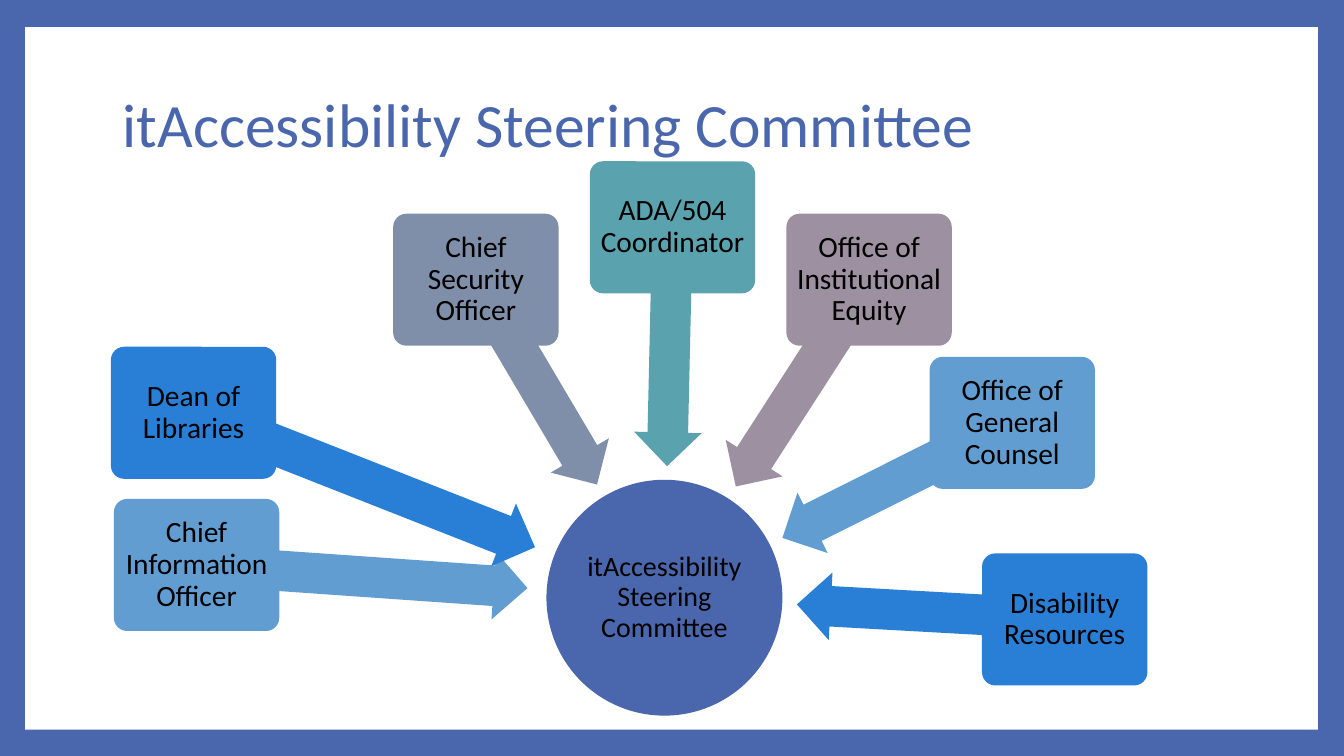
from math import cos, radians, sin

from pptx import Presentation
from pptx.dml.color import RGBColor
from pptx.enum.shapes import MSO_SHAPE
from pptx.enum.text import MSO_ANCHOR, PP_ALIGN
from pptx.util import Inches, Pt

RECTANGLE = MSO_SHAPE.RECTANGLE
ROUNDED = MSO_SHAPE.ROUNDED_RECTANGLE
OVAL = MSO_SHAPE.OVAL
LEFT_ARROW = MSO_SHAPE.LEFT_ARROW
MIDDLE = MSO_ANCHOR.MIDDLE
LEFT, CENTER = PP_ALIGN.LEFT, PP_ALIGN.CENTER

INDIGO = RGBColor(0x4A, 0x66, 0xAC)
SKY = RGBColor(0x62, 0x9D, 0xD1)
BLUE = RGBColor(0x29, 0x7F, 0xD5)
SLATE = RGBColor(0x7F, 0x8F, 0xA9)
TEAL = RGBColor(0x5A, 0xA2, 0xAE)
MAUVE = RGBColor(0x9D, 0x90, 0xA0)
WHITE = RGBColor(0xFF, 0xFF, 0xFF)
BLACK = RGBColor(0, 0, 0)

FONT = "Calibri"
MEMBER_WIDTH, MEMBER_HEIGHT = 1.64, 1.31
ARROW_HEIGHT = 0.67

MEMBERS = [
    ("Chief Information Officer", 1.13, 4.95, SKY, 184, 3.29),
    ("Dean of Libraries", 1.1, 3.44, BLUE, 201.5, 3.64),
    ("Chief Security Officer", 3.9, 2.12, SLATE, 239.4, 2.36),
    ("ADA/504 Coordinator", 5.85, 1.6, TEAL, 271.3, 2.37),
    ("Office of Institutional Equity", 7.8, 2.12, MAUVE, 302.8, 2.44),
    ("Office of General Counsel", 9.22, 3.54, SKY, 333.4, 2.55),
    ("Disability Resources", 9.74, 5.49, BLUE, 3.2, 2.66),
]


def write_text(box, text, size, color=BLACK, align=CENTER, inset=0.04):
    frame = box.text_frame
    frame.word_wrap = True
    frame.vertical_anchor = MIDDLE
    frame.margin_left = frame.margin_right = Inches(inset)
    frame.margin_top = frame.margin_bottom = Inches(inset)
    para = frame.paragraphs[0]
    para.alignment = align
    para.line_spacing = 0.9
    span = para.add_run()
    span.text = text
    span.font.name = FONT
    span.font.size = Pt(size)
    span.font.color.rgb = color


def add_solid(page, kind, left, top, width, height, color):
    shape = page.shapes.add_shape(
        kind, Inches(left), Inches(top), Inches(width), Inches(height))
    shape.shadow.inherit = False
    shape.fill.solid()
    shape.fill.fore_color.rgb = color
    shape.line.fill.background()
    return shape


def add_frame(page, left, top, width, height):
    page.background.fill.solid()
    page.background.fill.fore_color.rgb = INDIGO
    add_solid(page, RECTANGLE, left, top, width, height, WHITE)


def add_title(page, left, top, width, height):
    box = page.shapes.add_textbox(
        Inches(left), Inches(top), Inches(width), Inches(height))
    write_text(box, "itAccessibility Steering Committee", 44,
               color=INDIGO, align=LEFT, inset=0.1)


def add_hub(page, left, top, diameter):
    hub = add_solid(page, OVAL, left, top, diameter, diameter, INDIGO)
    write_text(hub, "itAccessibility Steering Committee", 20, inset=0.01)


def add_member(page, text, left, top, color, angle, length):
    arrow_x = left + MEMBER_WIDTH / 2 - cos(radians(angle)) * length / 2
    arrow_y = top + MEMBER_HEIGHT / 2 - sin(radians(angle)) * length / 2
    arrow = add_solid(page, LEFT_ARROW, arrow_x - length / 2,
                      arrow_y - ARROW_HEIGHT / 2, length, ARROW_HEIGHT, color)
    arrow.adjustments[0] = 0.6
    arrow.adjustments[1] = 0.5
    arrow.rotation = angle

    member = add_solid(page, ROUNDED, left, top,
                       MEMBER_WIDTH, MEMBER_HEIGHT, color)
    member.adjustments[0] = 0.1
    write_text(member, text, 21)


def main():
    deck = Presentation()
    deck.slide_width = Inches(13.33)
    deck.slide_height = Inches(7.5)
    page = deck.slides.add_slide(deck.slide_layouts[6])
    add_frame(page, 0.25, 0.27, 12.82, 6.97)
    add_title(page, 1.12, 0.64, 10.63, 1.25)
    add_hub(page, 5.42, 4.76, 2.34)
    for member in MEMBERS:
        add_member(page, *member)
    deck.save("out.pptx")


if __name__ == "__main__":
    main()
